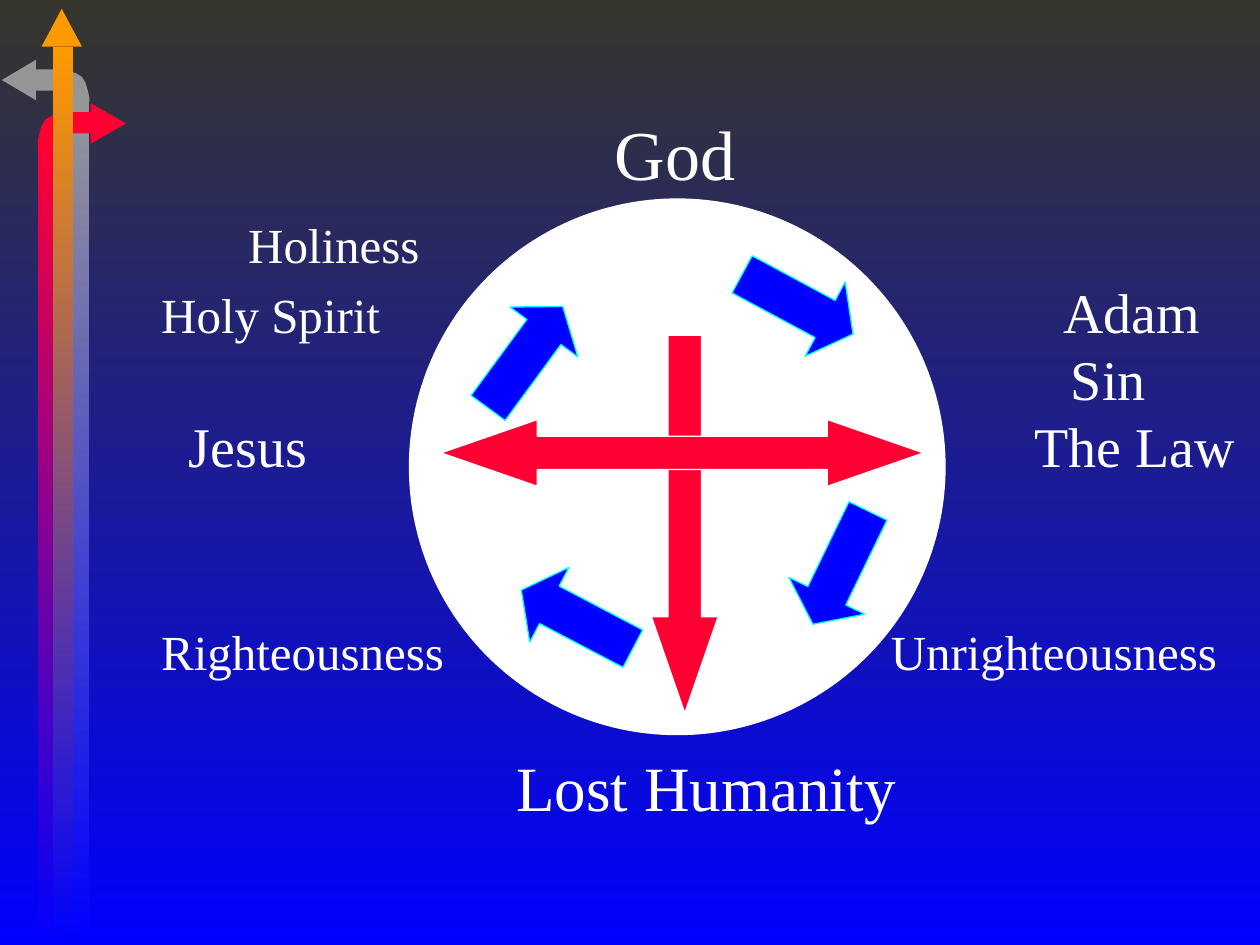
import lxml.etree
import pptx
import pptx.util
import pptx.dml.color
import pptx.enum.shapes
import pptx.enum.text
import pptx.oxml.ns

KIND = pptx.enum.shapes.MSO_SHAPE
WHITE, GREY, RED, GOLD = "FFFFFF", "969696", "FF0033", "FF9900"
BLUE, CYAN, DARK = "0000FF", "00FFFF", "36362B"
RISE = 1.0  # share of the type size from box top to baseline


def color(code):
    return pptx.dml.color.RGBColor.from_string(code)


class Board:
    """Draws on one slide, in a grid of 10 columns by 7.5 rows."""

    def __init__(self, deck):
        self.cell = deck.slide_width // 10
        self.slide = deck.slides.add_slide(deck.slide_layouts[6])
        self.font = {"name": "Times New Roman", "bold": False}
        self.frame = {
            "margin_left": 0, "margin_right": 0,
            "margin_top": 0, "margin_bottom": 0, "word_wrap": True,
            "vertical_anchor": pptx.enum.text.MSO_ANCHOR.TOP,
        }

    def span(self, *cells):
        return [round(c * self.cell) for c in cells]

    def fade(self, fill, top, end):
        fill.gradient()
        fill.gradient_angle = 270
        for stop, code in zip(fill.gradient_stops, (top, end)):
            stop.color.rgb = color(code)

    def paint(self, shape, fill, line=None, end=None):
        shape.shadow.inherit = False
        if end:
            self.fade(shape.fill, fill, end)
        else:
            shape.fill.solid()
            shape.fill.fore_color.rgb = color(fill)
        if line:
            shape.line.color.rgb = color(line)
            shape.line.width = pptx.util.Pt(0.75)
        else:
            shape.line.fill.background()

    def adjust(self, shape, values):
        """Write the guides by their schema names, adj1 and adj2."""
        name = pptx.oxml.ns.qn
        geom = shape._element.spPr.find(name("a:prstGeom"))
        guides = geom.find(name("a:avLst"))
        for old in list(guides):
            guides.remove(old)
        for i, value in enumerate(values, 1):
            guide = lxml.etree.SubElement(guides, name("a:gd"))
            guide.set("name", f"adj{i}")
            guide.set("fmla", f"val {round(value * 100000)}")

    def shape(self, kind, box, fill, line=None, end=None, turn=0, adjust=()):
        item = self.slide.shapes.add_shape(kind, *self.span(*box))
        item.rotation = turn
        if adjust:
            self.adjust(item, adjust)
        self.paint(item, fill, line, end)

    def curve(self, points, fill):
        dots = [self.span(*p) for p in points]
        pen = self.slide.shapes.build_freeform(*dots[0])
        pen.add_line_segments(dots[1:], close=True)
        self.paint(pen.convert_to_shape(), fill)

    def label(self, text, left, base, width, size):
        top = base - RISE * size / 72
        box = self.slide.shapes.add_textbox(
            *self.span(left, top, width, size / 60))
        for key, value in self.frame.items():
            setattr(box.text_frame, key, value)
        run = box.text_frame.paragraphs[0].add_run()
        run.text = text
        look = {**self.font, "size": pptx.util.Pt(size)}
        for key, value in look.items():
            setattr(run.font, key, value)
        run.font.color.rgb = color(WHITE)


def main():
    deck = pptx.Presentation()
    deck.slide_width = pptx.util.Inches(10)
    deck.slide_height = pptx.util.Inches(7.5)
    board = Board(deck)
    board.fade(board.slide.background.fill, DARK, BLUE)

    # Bent and straight arrows down the left edge
    bend = [(0.44, 0.55), (0.44, 0.72), (0.47, 0.72), (0.51, 0.73),
            (0.53, 0.76), (0.55, 0.78), (0.55, 0.81), (0.71, 0.81),
            (0.71, 0.78), (0.7, 0.73), (0.68, 0.66), (0.65, 0.61),
            (0.6, 0.58), (0.56, 0.57), (0.48, 0.55)]
    mirror = [(1.01 - x, y + 0.34) for x, y in bend]
    board.shape(KIND.RECTANGLE, (0.28, 0.55, 0.16, 0.17), GREY)
    board.curve(bend, GREY)
    board.shape(KIND.ISOSCELES_TRIANGLE, (-0.01, 0.5, 0.32, 0.27), GREY,
                turn=270)
    board.shape(KIND.ISOSCELES_TRIANGLE, (0.33, 0.07, 0.32, 0.3), GOLD)
    board.shape(KIND.RECTANGLE, (0.55, 0.81, 0.16, 6.69), GREY, end=BLUE)
    board.curve(mirror, RED)
    board.shape(KIND.ISOSCELES_TRIANGLE, (0.7, 0.84, 0.32, 0.28), RED,
                turn=90)
    board.shape(KIND.RECTANGLE, (0.57, 0.89, 0.16, 0.17), RED)
    for left, top, fill in ((0.3, 1.14, RED), (0.42, 0.37, GOLD)):
        board.shape(KIND.RECTANGLE, (left, top, 0.16, 7.5 - top), fill,
                    end=BLUE)

    # Circle
    board.shape(KIND.OVAL, (3.25, 1.58, 4.25, 4.25), WHITE, WHITE)

    # Labels: text, left, baseline, width, size
    for item in (
        ("God", 4.88, 1.43, 1.5, 40),
        ("Holiness", 1.97, 2.09, 1.8, 28),
        ("Holy Spirit", 1.28, 2.65, 2.1, 28),
        ("Adam", 8.44, 2.65, 1.4, 32),
        ("Sin", 8.5, 3.18, 1, 32),
        ("Jesus", 1.5, 3.71, 1.4, 32),
        ("The Law", 8.21, 3.71, 1.75, 32),
        ("Righteousness", 1.28, 5.32, 2.6, 28),
        ("Unrighteousness", 7.07, 5.32, 2.85, 28),
        ("Lost Humanity", 4.1, 6.44, 3.4, 36),
    ):
        board.label(*item)

    # Cycle arrows, clockwise from the top right
    for left, top, turn in ((5.83, 2.08, 28.3), (6.17, 4.17, 115.9),
                            (3.67, 2.5, 306.3), (4.08, 4.58, 207.7)):
        board.shape(KIND.RIGHT_ARROW, (left, top, 1, 0.67), BLUE, CYAN,
                    turn=turn, adjust=(0.5, 0.375))

    # Cross of double arrows, with the upper head covered
    for left, top, turn in ((5.17, 1.83, 0), (5.15, 1.68, 90)):
        board.shape(KIND.UP_DOWN_ARROW, (left, top, 0.53, 3.83), RED, WHITE,
                    turn=turn, adjust=(0.5, 1.443))
    board.shape(KIND.RECTANGLE, (4.92, 1.83, 0.83, 0.83), WHITE, WHITE)

    deck.save("out.pptx")


if __name__ == "__main__":
    main()
